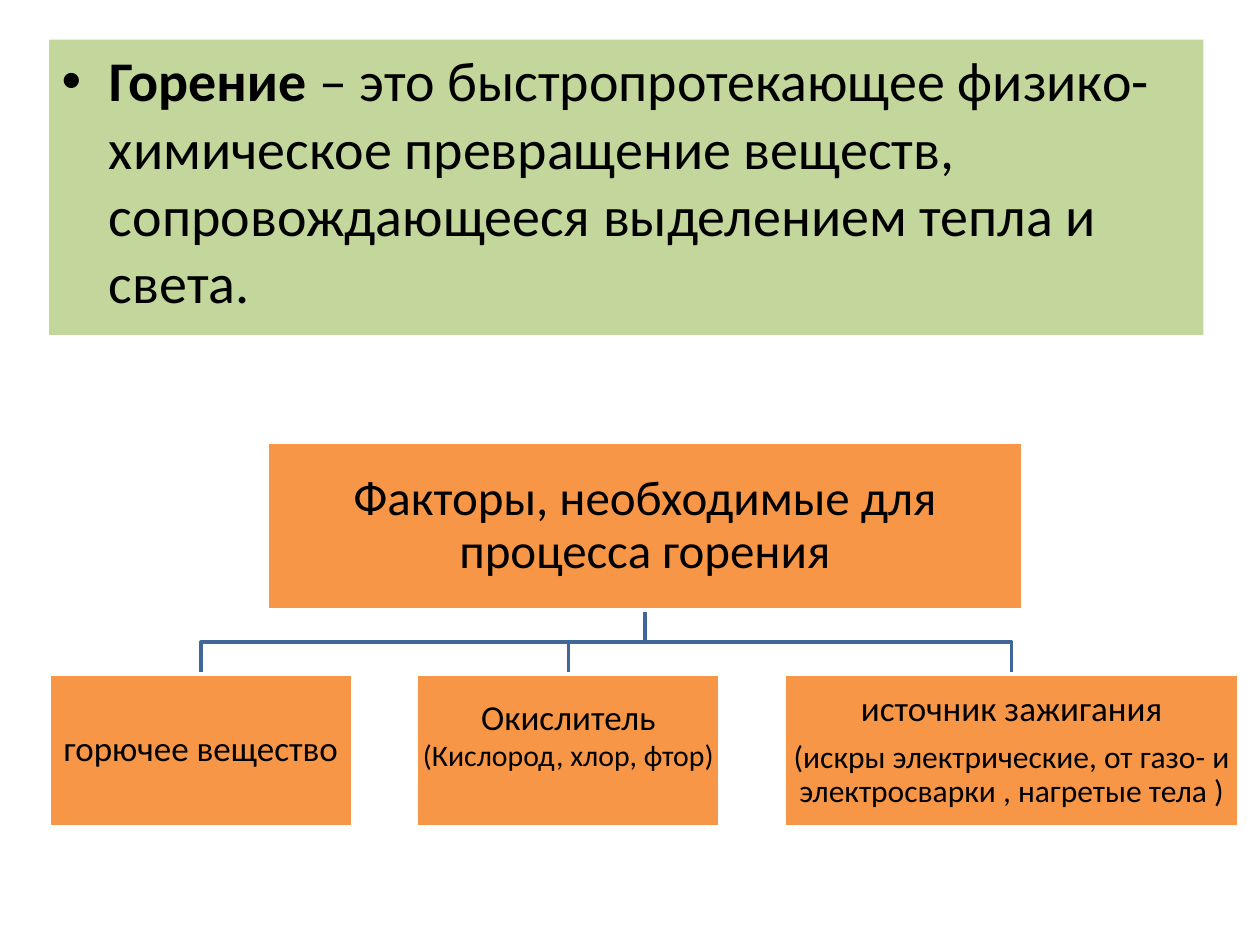
from pptx import Presentation
from pptx.dml.color import RGBColor
from pptx.enum.shapes import MSO_SHAPE
from pptx.enum.text import MSO_ANCHOR, PP_ALIGN
from pptx.util import Cm, Pt


def rgb(value):
    return RGBColor.from_string(value)


def add_run(p, text, size=20, bold=False, color="000000", font="Calibri"):
    r = p.add_run()
    r.text = text
    r.font.size = Pt(size)
    r.font.bold = bold
    r.font.name = font
    r.font.color.rgb = rgb(color)


class Deck:
    BODY_FILL = "C3D69B"
    BOX_FILL = "F79646"
    BOX_LINE = "FFFFFF"
    LINK = "3F6797"
    LINE_WIDTH = Pt(2)

    def __init__(self, width, height):
        self.prs = Presentation()
        self.prs.slide_width = Cm(width)
        self.prs.slide_height = Cm(height)

    def new_slide(self):
        self.s = self.prs.slides.add_slide(self.prs.slide_layouts[1])
        title = self.s.shapes.title.element
        title.getparent().remove(title)

    def body(self, left, top, width, height, runs):
        sp = self.s.placeholders[1]
        sp.left, sp.top, sp.width, sp.height = map(Cm, (left, top, width, height))
        sp.fill.solid()
        sp.fill.fore_color.rgb = rgb(self.BODY_FILL)
        p = sp.text_frame.paragraphs[0]
        for text, bold in runs:
            add_run(p, text, size=32, bold=bold)

    def box(self, left, top, width, height, lines, spacing=0.9, after=7, inset=0.03, lift=0):
        sp = self.s.shapes.add_shape(
            MSO_SHAPE.RECTANGLE, Cm(left), Cm(top), Cm(width), Cm(height))
        sp.shadow.inherit = False
        sp.fill.solid()
        sp.fill.fore_color.rgb = rgb(self.BOX_FILL)
        sp.line.color.rgb = rgb(self.BOX_LINE)
        sp.line.width = self.LINE_WIDTH
        tf = sp.text_frame
        tf.word_wrap = True
        tf.vertical_anchor = MSO_ANCHOR.MIDDLE
        tf.margin_left = tf.margin_right = tf.margin_top = Cm(inset)
        tf.margin_bottom = Cm(inset + lift)
        for i, (text, size) in enumerate(lines):
            p = tf.add_paragraph() if i else tf.paragraphs[0]
            p.alignment = PP_ALIGN.CENTER
            p.line_spacing = spacing
            p.space_after = Pt(after if i < len(lines) - 1 else 0)
            add_run(p, text, size=size)

    def link(self, x1, y1, x2, y2):
        mid = (y1 + y2) / 2
        fb = self.s.shapes.build_freeform(Cm(x1), Cm(y1))
        corners = [(x1, mid), (x2, mid), (x2, y2)]
        fb.add_line_segments([(Cm(x), Cm(y)) for x, y in corners], close=False)
        sp = fb.convert_to_shape()
        sp.shadow.inherit = False
        sp.fill.background()
        sp.line.color.rgb = rgb(self.LINK)
        sp.line.width = self.LINE_WIDTH

    def save(self):
        self.prs.save("out.pptx")


def main():
    deck = Deck(25.4, 19.05)
    deck.new_slide()
    deck.body(0.99, 0.8, 23.27, 5.95, [
        ("Горение", True),
        (" – это быстропротекающее физико-химическое превращение веществ, "
         "сопровождающееся выделением тепла и света.", False),
    ])

    root_left, root_top, root_width, root_height = 5.38, 8.92, 15.24, 3.38
    root_center, root_bottom = root_left + root_width / 2, root_top + root_height
    left, top, height, gap = 0.99, 13.59, 3.07, 1.29
    factors = [
        (6.12, [("горючее вещество", 20)], {}),
        (6.12, [("Окислитель", 20), ("(Кислород, хлор, фтор)", 17)],
         {"spacing": 1, "after": 0, "lift": 0.66}),
        (9.17, [("источник зажигания", 20),
                ("(искры электрические, от газо- и электросварки , нагретые тела )", 18)], {}),
    ]
    placed = []
    for width, lines, style in factors:
        placed.append((left, width, lines, style))
        left += width + gap

    for x, width, lines, style in reversed(placed):
        deck.link(root_center, root_bottom, x + width / 2, top)
    deck.box(root_left, root_top, root_width, root_height,
             [("Факторы, необходимые для процесса горения", 28)], inset=0.05)
    for x, width, lines, style in placed:
        deck.box(x, top, width, height, lines, **style)
    deck.save()


if __name__ == "__main__":
    main()
